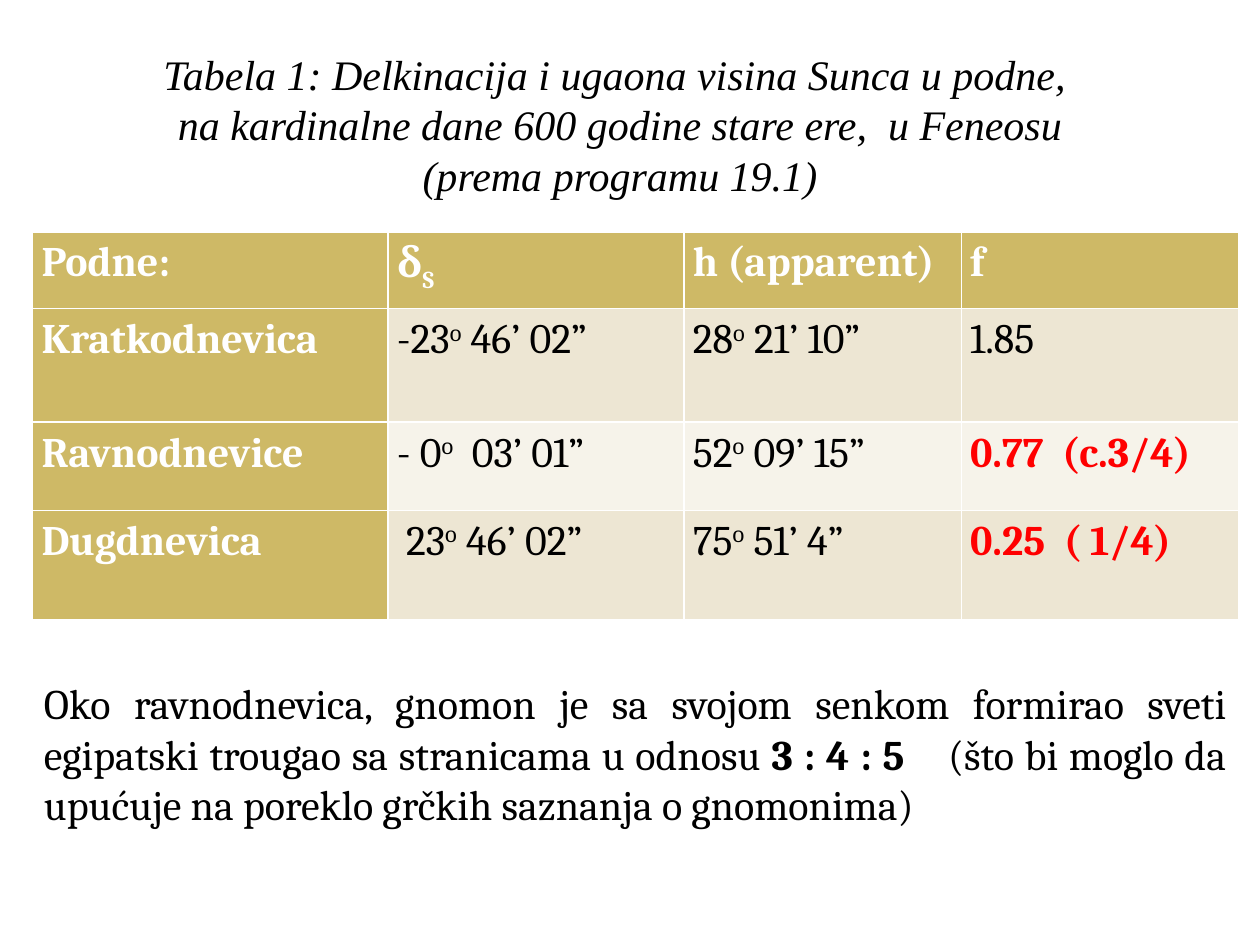
import pptx
import pptx.util
import pptx.dml.color
import pptx.enum.text
from pptx.util import Inches

COLORS = {
    "gold": "CEB966",
    "band_dark": "EDE6D3",
    "band_light": "F6F3EA",
    "white": "FFFFFF",
    "black": "000000",
    "red": "FF0000",
}


def add_run(paragraph, text, color="black", font="Cambria", bold=False, italic=False, baseline=0):
    """Add one 24 pt run; baseline is a percentage, negative for subscript."""
    run = paragraph.add_run()
    run.text = text
    run.font.size = pptx.util.Pt(24)
    run.font.name = font
    run.font.bold = bold
    run.font.italic = italic
    run.font.color.rgb = pptx.dml.color.RGBColor.from_string(COLORS[color])
    if baseline:
        run._r.get_or_add_rPr().set("baseline", str(baseline * 1000))


presentation = pptx.Presentation()
presentation.slide_width = Inches(10)
presentation.slide_height = Inches(7.5)
slide = presentation.slides.add_slide(presentation.slide_layouts[5])

# Title
title = slide.shapes.title
title.left, title.top, title.width, title.height = (
    Inches(1.17), Inches(0.33), Inches(7.5), Inches(1.31))
title.text_frame.word_wrap = False
title.text_frame.auto_size = pptx.enum.text.MSO_AUTO_SIZE.NONE
title.text_frame.vertical_anchor = pptx.enum.text.MSO_ANCHOR.MIDDLE
title_paragraph = title.text_frame.paragraphs[0]
title_paragraph.alignment = pptx.enum.text.PP_ALIGN.CENTER
title_lines = [
    "Tabela 1: Delkinacija i ugaona visina Sunca u podne, ",
    "na kardinalne dane 600 godine stare ere,  u Feneosu",
    "(prema programu 19.1)",
]
for index, line in enumerate(title_lines):
    if index:
        title_paragraph.add_line_break()
    add_run(title_paragraph, line, font="Times New Roman", italic=True)

# Table: each cell is a list of (text, baseline) runs
rows = [
    [[("Podne:", 0)], [("δ", 0), ("S", -25)], [("h (apparent)", 0)], [("f", 0)]],
    [[("Kratkodnevica", 0)], [("-23", 0), ("o", 30), (" 46’ 02”", 0)],
     [("28", 0), ("o", 30), (" 21’ 10”", 0)], [("1.85", 0)]],
    [[("Ravnodnevice", 0)], [("- 0", 0), ("o", 30), ("  03’ 01”", 0)],
     [("52", 0), ("o", 30), (" 09’ 15”", 0)], [("0.77  (c.3/4)", 0)]],
    [[("Dugdnevica", 0)], [(" 23", 0), ("o", 30), (" 46’ 02”", 0)],
     [("75", 0), ("o", 30), (" 51’ 4”", 0)], [("0.25  ( 1/4)", 0)]],
]
column_widths = [2.82, 2.35, 2.2, 2.2]
row_heights = [0.61, 0.9, 0.7, 0.87]
table = slide.shapes.add_table(
    len(rows), len(column_widths), Inches(0.26), Inches(1.84),
    Inches(sum(column_widths)), Inches(sum(row_heights))).table
table.first_col = True
for column, width in zip(table.columns, column_widths):
    column.width = Inches(width)
for row, height in zip(table.rows, row_heights):
    row.height = Inches(height)

for row_index, row in enumerate(rows):
    for column_index, runs in enumerate(row):
        is_heading = row_index == 0 or column_index == 0
        is_ratio = row_index >= 2 and column_index == 3
        if is_heading:
            fill, color = "gold", "white"
        else:
            fill = "band_dark" if row_index % 2 else "band_light"
            color = "red" if is_ratio else "black"
        cell = table.cell(row_index, column_index)
        cell.fill.solid()
        cell.fill.fore_color.rgb = pptx.dml.color.RGBColor.from_string(COLORS[fill])
        cell.margin_left = cell.margin_right = Inches(0.07)
        cell.margin_top = cell.margin_bottom = 0
        paragraph = cell.text_frame.paragraphs[0]
        paragraph.line_spacing = 1.15
        for text, baseline in runs:
            add_run(paragraph, text, color, bold=is_heading or is_ratio, baseline=baseline)

# Conclusion
conclusion = slide.shapes.add_textbox(Inches(0.25), Inches(5.33), Inches(9.58), Inches(1.31))
conclusion.text_frame.word_wrap = True
paragraph = conclusion.text_frame.paragraphs[0]
paragraph.alignment = pptx.enum.text.PP_ALIGN.JUSTIFY
add_run(paragraph, "Oko ravnodnevica, gnomon je sa svojom senkom formirao sveti "
                   "egipatski trougao sa stranicama u odnosu ")
add_run(paragraph, "3 : 4 : 5    ", bold=True)
add_run(paragraph, "(što bi moglo da upućuje na poreklo grčkih saznanja o gnomonima)")

presentation.save("out.pptx")
